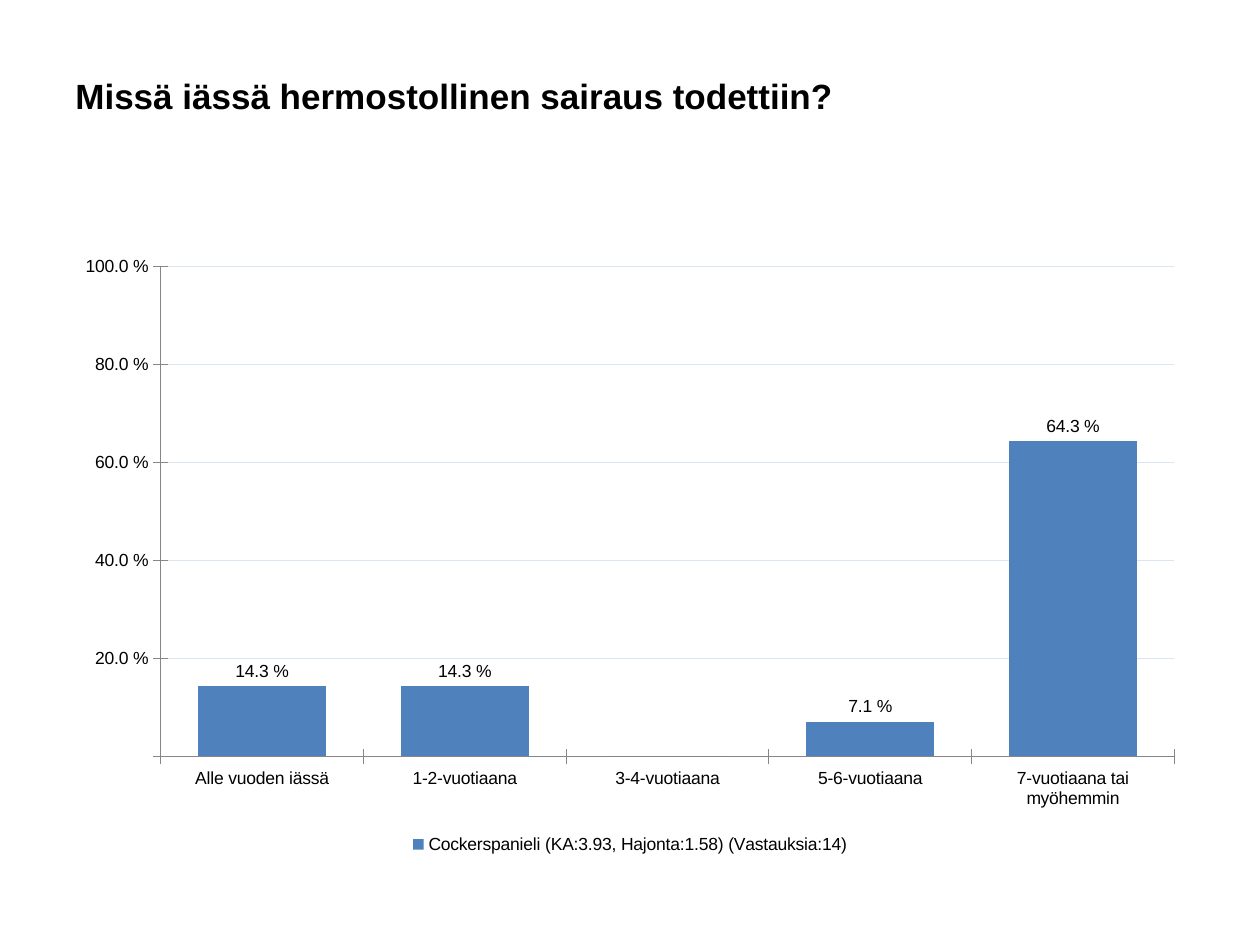
from pptx import Presentation
from pptx.chart.data import CategoryChartData
from pptx.dml.color import RGBColor
from pptx.enum.chart import XL_CHART_TYPE, XL_LABEL_POSITION, XL_LEGEND_POSITION, XL_TICK_MARK
from pptx.enum.text import MSO_ANCHOR
from pptx.util import Inches, Pt

COLORS = {"text": "000000", "bar": "4F81BD", "grid": "DCE6F2", "axis": "868686"}
PERCENT = r"0.0\ %;;;"
AGE_SHARES = {
    "Alle vuoden iässä": 0.143,
    "1-2-vuotiaana": 0.143,
    "3-4-vuotiaana": 0,
    "5-6-vuotiaana": 0.071,
    "7-vuotiaana tai myöhemmin": 0.643,
}


def style_font(font, size):
    font.name = "Arial"
    font.size = Pt(size)
    font.color.rgb = RGBColor.from_string(COLORS["text"])


presentation = Presentation()
presentation.slide_width = Inches(10)
presentation.slide_height = Inches(7.5)
slide = presentation.slides.add_slide(presentation.slide_layouts[6])

question = slide.shapes.add_textbox(Inches(0.5), Inches(0.36), Inches(9), Inches(0.79)).text_frame
question.word_wrap = True
question.vertical_anchor = MSO_ANCHOR.MIDDLE
heading = question.paragraphs[0]
heading.text = "Missä iässä hermostollinen sairaus todettiin?"
style_font(heading.font, 20)
heading.font.bold = True

answers = CategoryChartData(number_format=PERCENT)
answers.categories = list(AGE_SHARES)
answers.add_series("Cockerspanieli (KA:3.93, Hajonta:1.58) (Vastauksia:14)", list(AGE_SHARES.values()))
chart = slide.shapes.add_chart(
    XL_CHART_TYPE.COLUMN_CLUSTERED, Inches(0.5), Inches(1.94), Inches(9), Inches(4.88), answers
).chart
style_font(chart.font, 10)
chart.has_title = False
chart.has_legend = True
chart.legend.position = XL_LEGEND_POSITION.BOTTOM
chart.legend.include_in_layout = False
style_font(chart.legend.font, 10)

for axis in (chart.category_axis, chart.value_axis):
    axis.major_tick_mark = XL_TICK_MARK.CROSS
    axis.minor_tick_mark = XL_TICK_MARK.NONE
    axis.format.line.color.rgb = RGBColor.from_string(COLORS["axis"])
    axis.format.line.width = Pt(0.75)
    axis.tick_labels.number_format = PERCENT
    axis.tick_labels.number_format_is_linked = False
    style_font(axis.tick_labels.font, 10)

share_axis = chart.value_axis
share_axis.minimum_scale = 0
share_axis.maximum_scale = 1
share_axis.major_unit = 0.2
share_axis.has_major_gridlines = True
gridline = share_axis.major_gridlines.format.line
gridline.color.rgb = RGBColor.from_string(COLORS["grid"])
gridline.width = Pt(0.75)

plot = chart.plots[0]
plot.gap_width = 58
plot.vary_by_categories = False
bars = plot.series[0]
bars.format.fill.solid()
bars.format.fill.fore_color.rgb = RGBColor.from_string(COLORS["bar"])
labels = bars.data_labels
labels.show_value = True
labels.position = XL_LABEL_POSITION.OUTSIDE_END
labels.number_format = PERCENT
labels.number_format_is_linked = False
style_font(labels.font, 10)

presentation.save("out.pptx")
